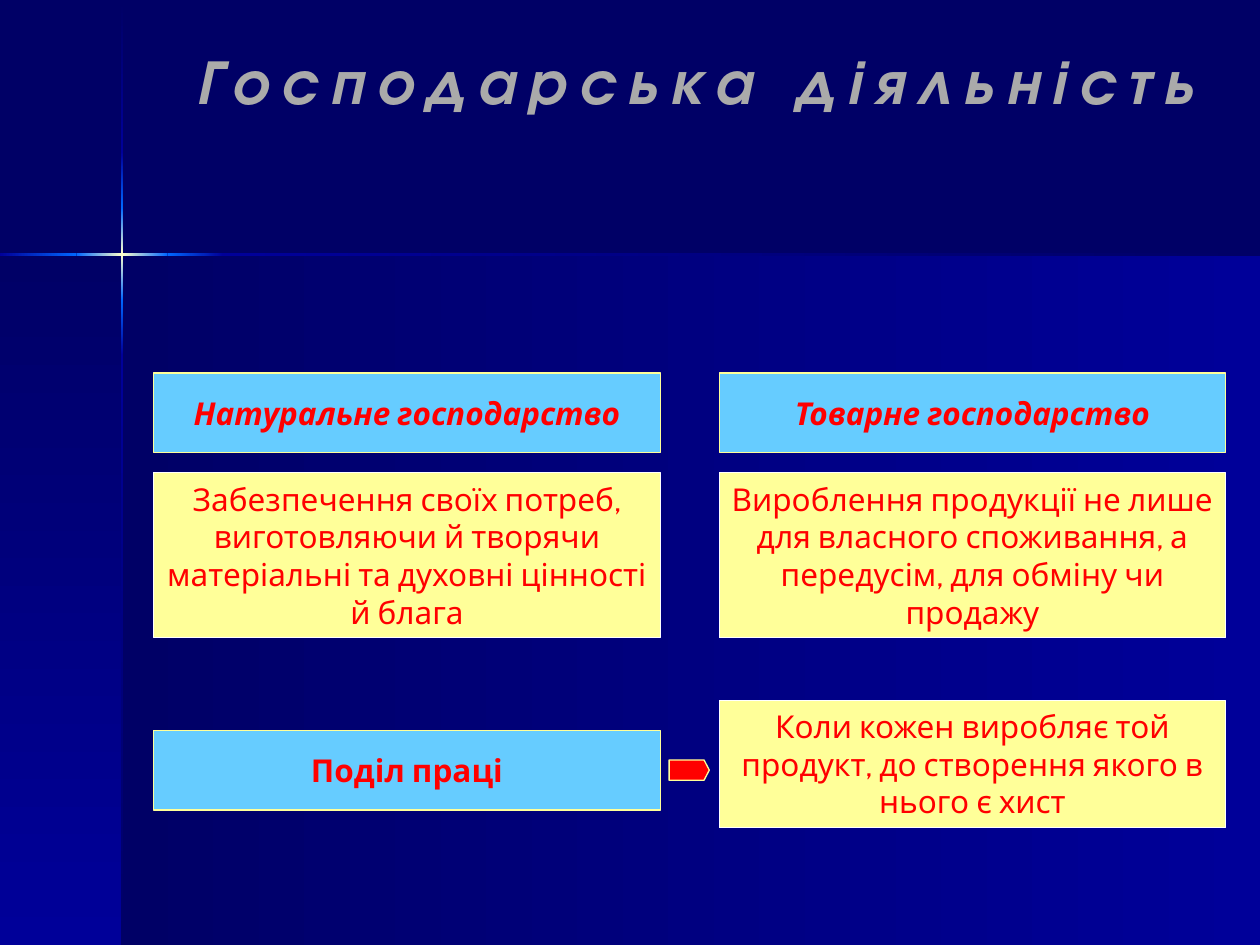
"""Build a slide that contrasts subsistence and commodity economies."""
from itertools import pairwise

from lxml.etree import SubElement
from pptx import Presentation
from pptx.dml.color import RGBColor
from pptx.enum.shapes import MSO_SHAPE
from pptx.enum.text import MSO_ANCHOR, PP_ALIGN
from pptx.oxml.ns import qn
from pptx.util import Cm, Pt

COLORS = {
    "night": "000066", "navy": "000099", "azure": "0066FF", "glow": "FFFFCC",
    "sky": "66CCFF", "cream": "FFFF99", "white": "FFFFFF", "red": "FF0000",
    "silver": "AAAAAA",
}
TITLE = "Господарська діяльність"
TITLE_FONT = {"name": "TeX Gyre Adventor", "size": Pt(36), "bold": True, "italic": True}
PLAIN = {"name": "Cabin", "size": Pt(18), "bold": False, "italic": False}
BOLD = PLAIN | {"bold": True}
SLANTED = BOLD | {"italic": True}
BLUE_BOX = {"fill": "sky", "line": "cream"}
CREAM_BOX = {"fill": "cream", "line": "white"}
NARROW, WIDE = 0.15, 0.25

COLUMNS, BOX_WIDTH = (3.1, 14.5), 10.21
BOXES = [
    ("Натуральне господарство", 0, 7.52, 1.6, BLUE_BOX, SLANTED, NARROW, MSO_ANCHOR.MIDDLE),
    ("Товарне господарство", 1, 7.52, 1.6, BLUE_BOX, SLANTED, NARROW, MSO_ANCHOR.MIDDLE),
    ("Забезпечення своїх потреб, виготовляючи й творячи матеріальні та духовні "
     "цінності й блага", 0, 9.53, 3.33, CREAM_BOX, PLAIN, NARROW, MSO_ANCHOR.MIDDLE),
    ("Вироблення продукції не лише для власного споживання, а передусім, для обміну "
     "чи продажу", 1, 9.53, 3.33, CREAM_BOX, PLAIN, NARROW, MSO_ANCHOR.MIDDLE),
    ("Поділ праці", 0, 14.73, 1.6, BLUE_BOX, BOLD, NARROW, MSO_ANCHOR.MIDDLE),
    ("Коли кожен виробляє той продукт, до створення якого в нього є хист",
     1, 14.12, 2.57, CREAM_BOX, PLAIN, WIDE, MSO_ANCHOR.TOP),
]

PAGE_WIDTH, PAGE_HEIGHT = 25.4, 19.05
CROSS_X, CROSS_Y, BAR = 2.46, 5.13, 0.05
BAR_TONES = [("night", "navy"), ("navy", "azure"), ("azure", "glow", "azure"),
             ("azure", "navy"), ("navy", "night")]
VERTICAL_STOPS = (0.03, 3.07, 4.19, 6.05, 7.16, PAGE_HEIGHT)
HORIZONTAL_STOPS = (0, 1.54, 3.38, 4.5, PAGE_WIDTH)


def color(name):
    return RGBColor.from_string(COLORS[name])


def add_block(page, kind, left, top, width, height):
    block = page.shapes.add_shape(kind, Cm(left), Cm(top), Cm(width), Cm(height))
    block.shadow.inherit = False
    return block


def paint(block, fill, line):
    block.fill.solid()
    block.fill.fore_color.rgb = color(fill)
    block.line.color.rgb = color(line)
    block.line.width = Pt(0.75)


def add_gradient(page, area, tones, angle):
    block = add_block(page, MSO_SHAPE.RECTANGLE, *area)
    block.line.fill.background()
    block.fill.gradient()
    gradient = block._element.spPr.find(qn("a:gradFill"))
    for child in list(gradient):
        gradient.remove(child)
    stops = SubElement(gradient, qn("a:gsLst"))
    for index, tone in enumerate(tones):
        position = 100000 * index // (len(tones) - 1)
        stop = SubElement(stops, qn("a:gs"), pos=str(position))
        SubElement(stop, qn("a:srgbClr"), val=COLORS[tone])
    SubElement(gradient, qn("a:lin"), ang=str(angle * 60000), scaled="0")


def write(frame, text, style, tone):
    paragraph = frame.paragraphs[0]
    paragraph.alignment = PP_ALIGN.CENTER
    span = paragraph.add_run()
    span.text = text
    for name, value in style.items():
        setattr(span.font, name, value)
    span.font.color.rgb = color(tone)
    return span


def add_backdrop(page):
    page.background.fill.solid()
    page.background.fill.fore_color.rgb = color("night")
    depth = PAGE_HEIGHT - CROSS_Y
    panel_tones = ("night", "navy")
    add_gradient(page, (CROSS_X, CROSS_Y, PAGE_WIDTH - CROSS_X, depth), panel_tones, 0)
    add_gradient(page, (0, CROSS_Y, CROSS_X, depth), panel_tones, 90)
    for (start, end), tones in zip(pairwise(VERTICAL_STOPS), BAR_TONES):
        add_gradient(page, (CROSS_X - BAR / 2, start, BAR, end - start), tones, 90)
    for (start, end), tones in zip(pairwise(HORIZONTAL_STOPS), BAR_TONES[1:]):
        add_gradient(page, (start, CROSS_Y - BAR / 2, end - start, BAR), tones, 0)


def add_title(page):
    box = page.shapes.add_textbox(Cm(3.3), Cm(0.71), Cm(21.41), Cm(3.4))
    box.text_frame.word_wrap = False
    span = write(box.text_frame, TITLE, TITLE_FONT, "silver")
    span.font._element.set("spc", "720")


def add_boxes(page):
    for text, column, top, height, look, style, inset, anchor in BOXES:
        box = add_block(page, MSO_SHAPE.RECTANGLE, COLUMNS[column], top, BOX_WIDTH, height)
        paint(box, **look)
        frame = box.text_frame
        layout = {"word_wrap": True, "vertical_anchor": anchor,
                  "margin_left": Cm(inset), "margin_right": Cm(inset),
                  "margin_top": Cm(0.13), "margin_bottom": Cm(0.13)}
        for name, value in layout.items():
            setattr(frame, name, value)
        write(frame, text, style, "red")


def main():
    deck = Presentation()
    deck.slide_width, deck.slide_height = Cm(PAGE_WIDTH), Cm(PAGE_HEIGHT)
    page = deck.slides.add_slide(deck.slide_layouts[6])
    add_backdrop(page)
    add_title(page)
    add_boxes(page)
    pointer = add_block(page, MSO_SHAPE.PENTAGON, 13.49, 15.32, 0.81, 0.41)
    pointer.adjustments[0] = 0.26
    paint(pointer, "red", "cream")
    deck.save("out.pptx")


if __name__ == "__main__":
    main()
